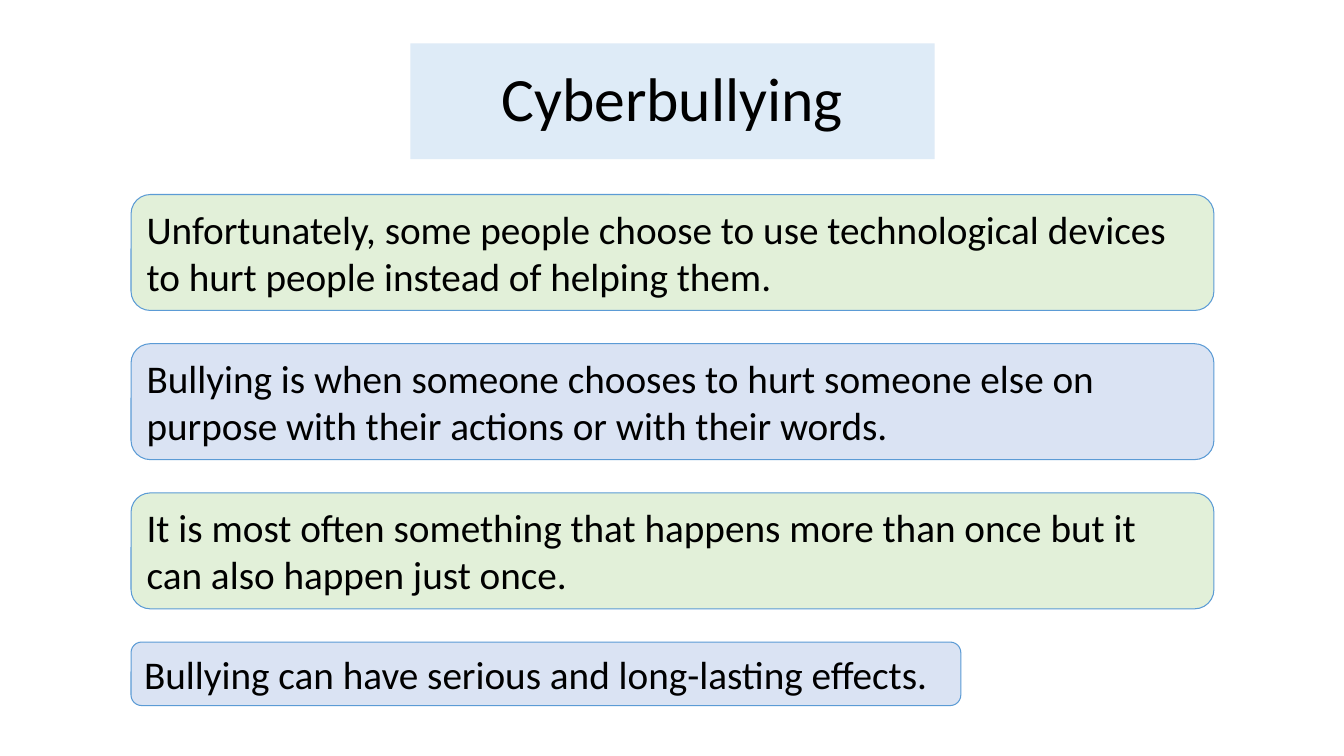
from pptx import Presentation
from pptx.dml.color import RGBColor
from pptx.enum import shapes, text
from pptx.util import Inches, Pt

HEADING = "Cyberbullying"
GREEN, BLUE = "E2F0D9", "DAE3F3"
STATEMENTS = [
    ("Unfortunately, some people choose to use technological devices to hurt people instead of helping them.",
     GREEN, 10.74, 1.15),
    ("Bullying is when someone chooses to hurt someone else on purpose with their actions or with their words.",
     BLUE, 10.74, 1.15),
    ("It is most often something that happens more than once but it can also happen just once.",
     GREEN, 10.74, 1.15),
    ("Bullying can have serious and long-lasting effects.", BLUE, 8.23, 0.63),
]
LEFT, TOP, GAP = 1.3, 1.93, 0.33


def color(value):
    return RGBColor.from_string(value)


def write(part, words, size, align, anchor, fill):
    part.fill.solid()
    part.fill.fore_color.rgb = color(fill)
    frame = part.text_frame
    frame.text = words
    frame.word_wrap = True
    frame.vertical_anchor = anchor
    paragraph = frame.paragraphs[0]
    paragraph.alignment = align
    paragraph.font.name = "Calibri"
    paragraph.font.size = Pt(size)
    paragraph.font.color.rgb = color("000000")
    return paragraph


def add_heading(slide):
    heading = slide.shapes.title
    heading.left, heading.top = Inches(4.07), Inches(0.43)
    heading.width, heading.height = Inches(5.2), Inches(1.15)
    line = write(heading, HEADING, 44, text.PP_ALIGN.CENTER, text.MSO_ANCHOR.MIDDLE, "DEEBF7")
    line.line_spacing = 0.9


def add_statements(slide):
    top = TOP
    for words, fill, width, height in STATEMENTS:
        statement = slide.shapes.add_shape(
            shapes.MSO_SHAPE.ROUNDED_RECTANGLE,
            Inches(LEFT), Inches(top), Inches(width), Inches(height))
        statement.shadow.inherit = False
        statement.line.color.rgb = color("5B9BD5")
        statement.line.width = Pt(0.75)
        write(statement, words, 28, text.PP_ALIGN.LEFT, text.MSO_ANCHOR.TOP, fill)
        statement.text_frame.auto_size = text.MSO_AUTO_SIZE.SHAPE_TO_FIT_TEXT
        top += height + GAP


def main():
    deck = Presentation()
    deck.slide_width, deck.slide_height = Inches(13.33), Inches(7.5)
    slide = deck.slides.add_slide(deck.slide_layouts[5])
    add_heading(slide)
    add_statements(slide)
    deck.save("out.pptx")


if __name__ == "__main__":
    main()
